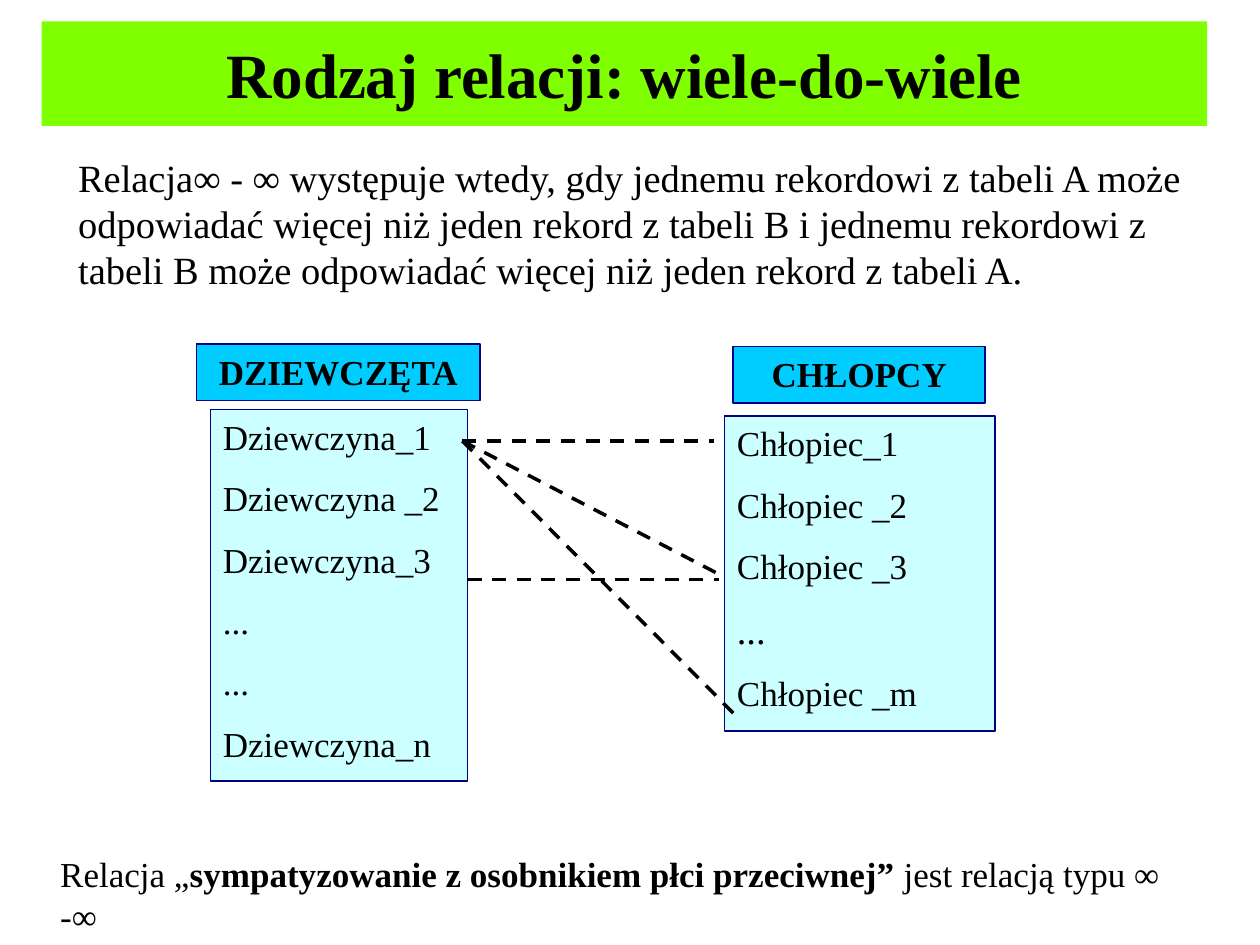
from pptx import Presentation
from pptx import util as u
from pptx.dml.color import RGBColor
from pptx.enum import dml, shapes, text
from pptx.oxml.ns import qn
from lxml import etree

inch = u.Inches


def paint(fmt, hue):
    if hasattr(fmt, "solid"):
        fmt.solid()
        fmt = fmt.fore_color
    fmt.rgb = RGBColor.from_string(hue)


def write(box, rows, size=20, bold=False, align="LEFT", anchor="TOP", left=0.1):
    frame = box.text_frame
    look = {
        "word_wrap": True,
        "vertical_anchor": getattr(text.MSO_ANCHOR, anchor),
        "margin_left": inch(left),
        "margin_right": inch(0.1),
        "margin_top": inch(0.05),
        "margin_bottom": inch(0.05),
    }
    for key, val in look.items():
        setattr(frame, key, val)
    for num, row in enumerate(rows):
        para = frame.add_paragraph() if num else frame.paragraphs[0]
        para.alignment = getattr(text.PP_ALIGN, align)
        para.space_before = u.Pt(11 if num else 0)
        for part, heavy, pts in row if isinstance(row, list) else [(row, bold, size)]:
            run = para.add_run()
            run.text = part
            font = {"name": "Times New Roman", "size": u.Pt(pts), "bold": heavy}
            for key, val in font.items():
                setattr(run.font, key, val)
            paint(run.font.color, "000000")


deck = Presentation()
deck.slide_width, deck.slide_height = inch(10), inch(7.5)
slide = deck.slides.add_slide(deck.slide_layouts[6])
items = slide.shapes

body = items.add_textbox(inch(0.14), inch(1.17), inch(9.75), inch(1.25))
write(body, [
    "Relacja∞ - ∞ występuje wtedy, gdy jednemu rekordowi z tabeli A może "
    "odpowiadać więcej niż jeden rekord z tabeli B i jednemu rekordowi z "
    "tabeli B może odpowiadać więcej niż jeden rekord z tabeli A."
], size=22, left=0.48)

note = items.add_textbox(inch(0.38), inch(6.72), inch(9.26), inch(0.43))
write(note, [[
    ("Relacja „", False, 20),
    ("sympatyzowanie z osobnikiem płci przeciwnej”", True, 20),
    (" jest relacją typu ∞ -∞", False, 20),
]])

title = {"size": 36, "bold": True, "align": "CENTER", "anchor": "MIDDLE"}
head = {"bold": True, "align": "CENTER"}
girls = ["Dziewczyna_1", "Dziewczyna _2", "Dziewczyna_3", "...", "...", "Dziewczyna_n"]
boys = ["Chłopiec_1", "Chłopiec _2", "Chłopiec _3", [("...", False, 22)], "Chłopiec _m"]
boxes = [
    ((0.33, 0.17, 9.25, 0.83), "7FFF00", None, ["Rodzaj relacji: wiele-do-wiele"], title),
    ((1.67, 3.25, 2.04, 2.95), "CCFFFF", "000080", girls, {}),
    ((1.56, 2.73, 2.25, 0.45), "00CCFF", "000080", ["DZIEWCZĘTA"], head),
    ((5.75, 3.3, 2.15, 2.5), "CCFFFF", "000080", boys, {}),
    ((5.82, 2.75, 2, 0.45), "00CCFF", "000080", ["CHŁOPCY"], head),
]
for place, fill, edge, rows, style in boxes:
    box = items.add_shape(shapes.MSO_SHAPE.RECTANGLE, *map(inch, place))
    box.shadow.inherit = False
    paint(box.fill, fill)
    if edge:
        paint(box.line.fill, edge)
        box.line.width = u.Pt(1)
    else:
        box.line.fill.background()
    write(box, rows, **style)

links = [
    (3.67, 3.5, 5.75, 4.58),
    (3.67, 3.5, 5.83, 5.67),
    (3.67, 3.5, 5.67, 3.5),
    (3.71, 4.6, 5.71, 4.6),
]
for ends in links:
    link = items.add_connector(shapes.MSO_CONNECTOR.STRAIGHT, *map(inch, ends))
    paint(link.line.fill, "000000")
    link.line.width = u.Pt(2)
    link.line.dash_style = dml.MSO_LINE.DASH
    etree.SubElement(link._element.spPr, qn("a:effectLst"))

deck.save("out.pptx")
